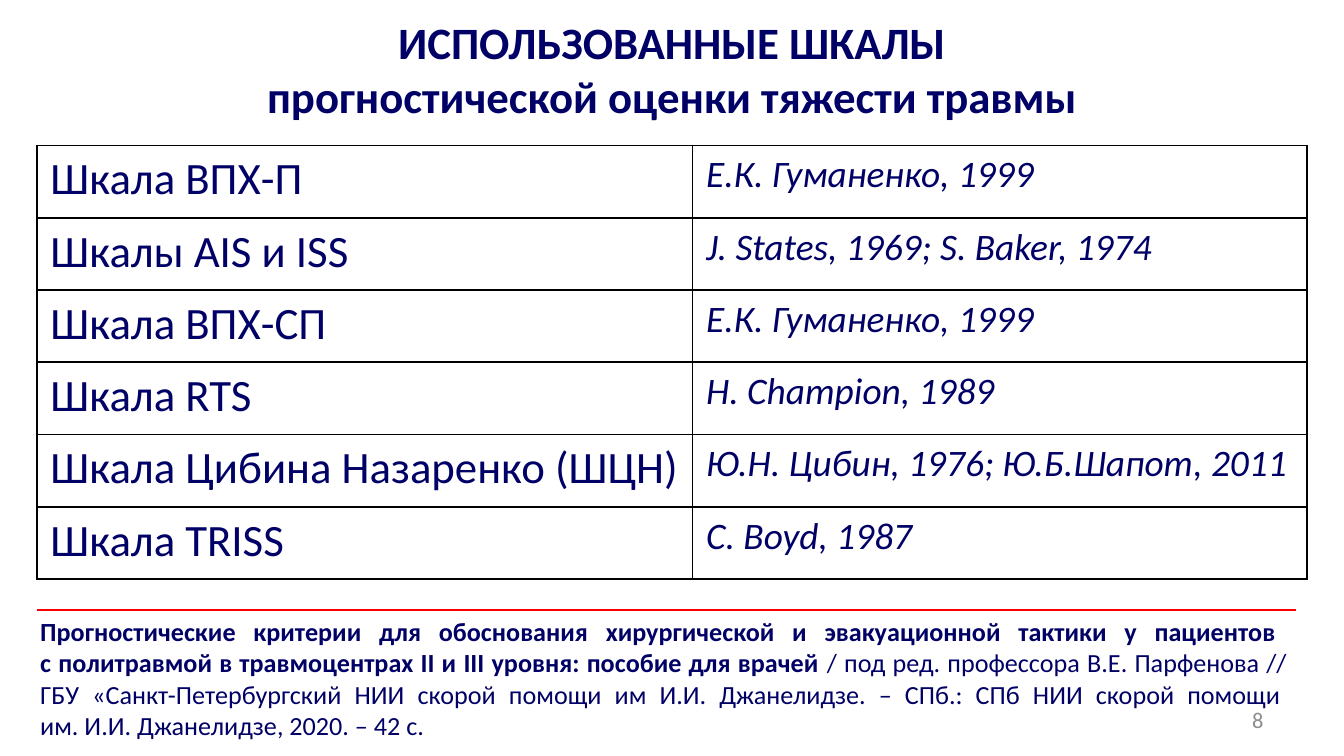
from dataclasses import dataclass

from lxml import etree
from pptx import Presentation
from pptx.dml.color import RGBColor
from pptx.enum.shapes import MSO_CONNECTOR
from pptx.enum.text import MSO_ANCHOR, PP_ALIGN
from pptx.oxml.ns import qn
from pptx.slide import Slide
from pptx.table import _Cell
from pptx.text.text import _Paragraph
from pptx.util import Cm, Length, Pt

STRAIGHT = MSO_CONNECTOR.STRAIGHT
TOP, MIDDLE = MSO_ANCHOR.TOP, MSO_ANCHOR.MIDDLE
CENTER, JUSTIFY, RIGHT = PP_ALIGN.CENTER, PP_ALIGN.JUSTIFY, PP_ALIGN.RIGHT


@dataclass(frozen=True)
class Theme:
    font: str = "Calibri"
    navy: str = "000066"
    gray: str = "8C8C8C"
    red: str = "FF0000"
    border: str = "000000"
    title_size: int = 24
    author_size: int = 20
    source_size: int = 14
    number_size: int = 12
    border_width: Length = Pt(1)
    rule_width: Length = Pt(1.25)


@dataclass(frozen=True)
class Scale:
    name: str
    author: str


@dataclass(frozen=True)
class Box:
    left: Length
    top: Length
    width: Length
    height: Length


THEME = Theme()

SCALES = [
    Scale("Шкала ВПХ-П", "Е.К. Гуманенко, 1999"),
    Scale("Шкалы AIS и ISS", "J. States, 1969; S. Baker, 1974"),
    Scale("Шкала ВПХ-СП", "Е.К. Гуманенко, 1999"),
    Scale("Шкала RTS", "H. Champion, 1989"),
    Scale("Шкала Цибина Назаренко (ШЦН)", "Ю.Н. Цибин, 1976; Ю.Б.Шапот, 2011"),
    Scale("Шкала TRISS", "C. Boyd, 1987"),
]
TITLE = "ИСПОЛЬЗОВАННЫЕ ШКАЛЫ\nпрогностической оценки тяжести травмы"
SOURCE_TITLE = (
    "Прогностические критерии для обоснования хирургической "
    "и эвакуационной тактики у пациентов \n"
    "с политравмой в травмоцентрах II и III уровня: пособие для врачей"
)
SOURCE_DETAILS = [
    " / под ред. профессора В.Е. Парфенова // ",
    "ГБУ «Санкт-Петербургский НИИ скорой помощи им И.И. Джанелидзе. "
    "– СПб.: СПб НИИ скорой помощи ",
    "им. И.И. Джанелидзе, 2020. – 42 с.",
]

TITLE_BOX = Box(Cm(1.27), Cm(0.15), Cm(22.86), Cm(2.59))
TABLE_BOX = Box(Cm(0.7), Cm(2.75), Cm(24), Cm(8.2))
SOURCE_BOX = Box(Cm(0.51), Cm(11.51), Cm(24.21), Cm(2.64))
NUMBER_BOX = Box(Cm(18.21), Cm(13.23), Cm(5.92), Cm(0.76))
COLUMN_WIDTHS = (Cm(12.39), Cm(11.61))


def format_runs(paragraph: _Paragraph, size: int, color: str = THEME.navy,
                bold: bool = False, italic: bool = False) -> None:
    for run in paragraph.runs:
        font = run.font
        font.name, font.size = THEME.font, Pt(size)
        font.bold, font.italic = bold, italic
        font.color.rgb = RGBColor.from_string(color)
    for line_break in paragraph._p.findall(qn("a:br")):
        if not len(line_break):
            etree.SubElement(line_break, qn("a:rPr"), sz=str(size * 100))


def add_text(slide: Slide, box: Box, text: str, size: int, alignment: PP_ALIGN,
             color: str = THEME.navy, bold: bool = False,
             anchor: MSO_ANCHOR = TOP) -> _Paragraph:
    shape = slide.shapes.add_textbox(box.left, box.top, box.width, box.height)
    text_frame = shape.text_frame
    text_frame.word_wrap = True
    text_frame.vertical_anchor = anchor
    paragraph = text_frame.paragraphs[0]
    paragraph.text = text
    paragraph.alignment = alignment
    format_runs(paragraph, size, color, bold)
    return paragraph


def set_borders(cell: _Cell) -> None:
    properties = cell._tc.get_or_add_tcPr()
    for side in ("lnL", "lnR", "lnT", "lnB"):
        line = etree.SubElement(properties, qn(f"a:{side}"), w=str(THEME.border_width))
        fill = etree.SubElement(line, qn("a:solidFill"))
        etree.SubElement(fill, qn("a:srgbClr"), val=THEME.border)


def fill_cell(cell: _Cell, text: str, size: int, italic: bool) -> None:
    paragraph = cell.text_frame.paragraphs[0]
    paragraph.text = text
    format_runs(paragraph, size, italic=italic)
    set_borders(cell)
    cell.fill.background()


def add_scale_table(slide: Slide, box: Box, scales: list[Scale]) -> None:
    table = slide.shapes.add_table(
        len(scales), len(COLUMN_WIDTHS), box.left, box.top, box.width, box.height
    ).table
    table.first_row = table.horz_banding = False
    for column, width in zip(table.columns, COLUMN_WIDTHS):
        column.width = width
    for row, scale in enumerate(scales):
        fill_cell(table.cell(row, 0), scale.name, THEME.title_size, italic=False)
        fill_cell(table.cell(row, 1), scale.author, THEME.author_size, italic=True)


def add_rule(slide: Slide, left: Length, right: Length, top: Length) -> None:
    rule = slide.shapes.add_connector(STRAIGHT, left, top, right, top)
    rule.line.color.rgb = RGBColor.from_string(THEME.red)
    rule.line.width = THEME.rule_width
    etree.SubElement(rule._element.spPr, qn("a:effectLst"))


def add_source(slide: Slide) -> None:
    paragraph = add_text(slide, SOURCE_BOX, SOURCE_TITLE, THEME.source_size,
                         JUSTIFY, bold=True)
    title_run_count = len(paragraph.runs)
    for index, line in enumerate(SOURCE_DETAILS):
        if index:
            paragraph.add_line_break()
        paragraph.add_run().text = line
    format_runs(paragraph, THEME.source_size)
    for run in paragraph.runs[:title_run_count]:
        run.font.bold = True


def main() -> None:
    presentation = Presentation()
    presentation.slide_width, presentation.slide_height = Cm(25.4), Cm(14.29)
    slide = presentation.slides.add_slide(presentation.slide_layouts[6])
    add_text(slide, TITLE_BOX, TITLE, THEME.title_size, CENTER, bold=True)
    add_scale_table(slide, TABLE_BOX, SCALES)
    add_rule(slide, TABLE_BOX.left, Cm(24.5), Cm(11.53))
    add_source(slide)
    add_text(slide, NUMBER_BOX, "8", THEME.number_size, RIGHT, THEME.gray, anchor=MIDDLE)
    presentation.save("out.pptx")


if __name__ == "__main__":
    main()
